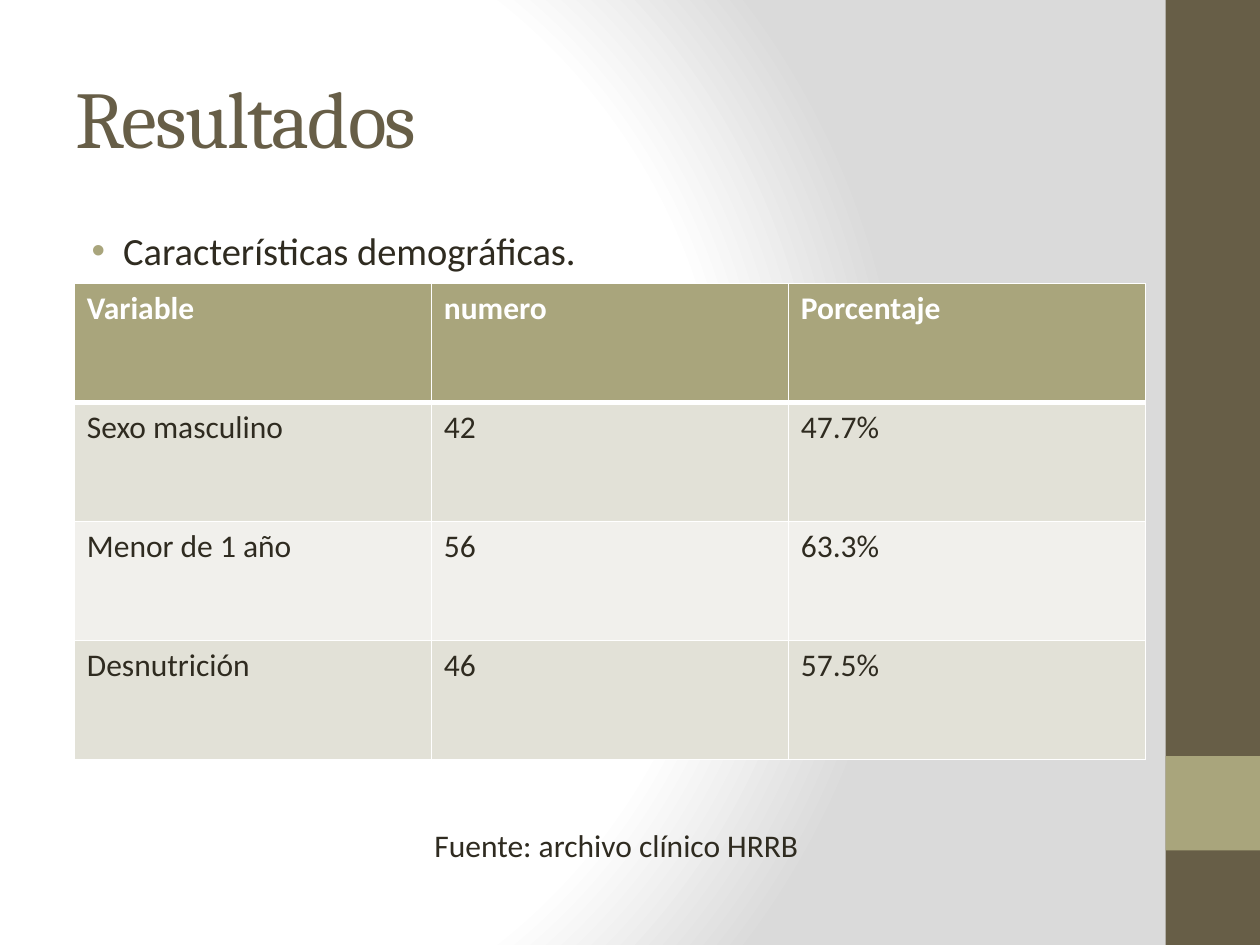
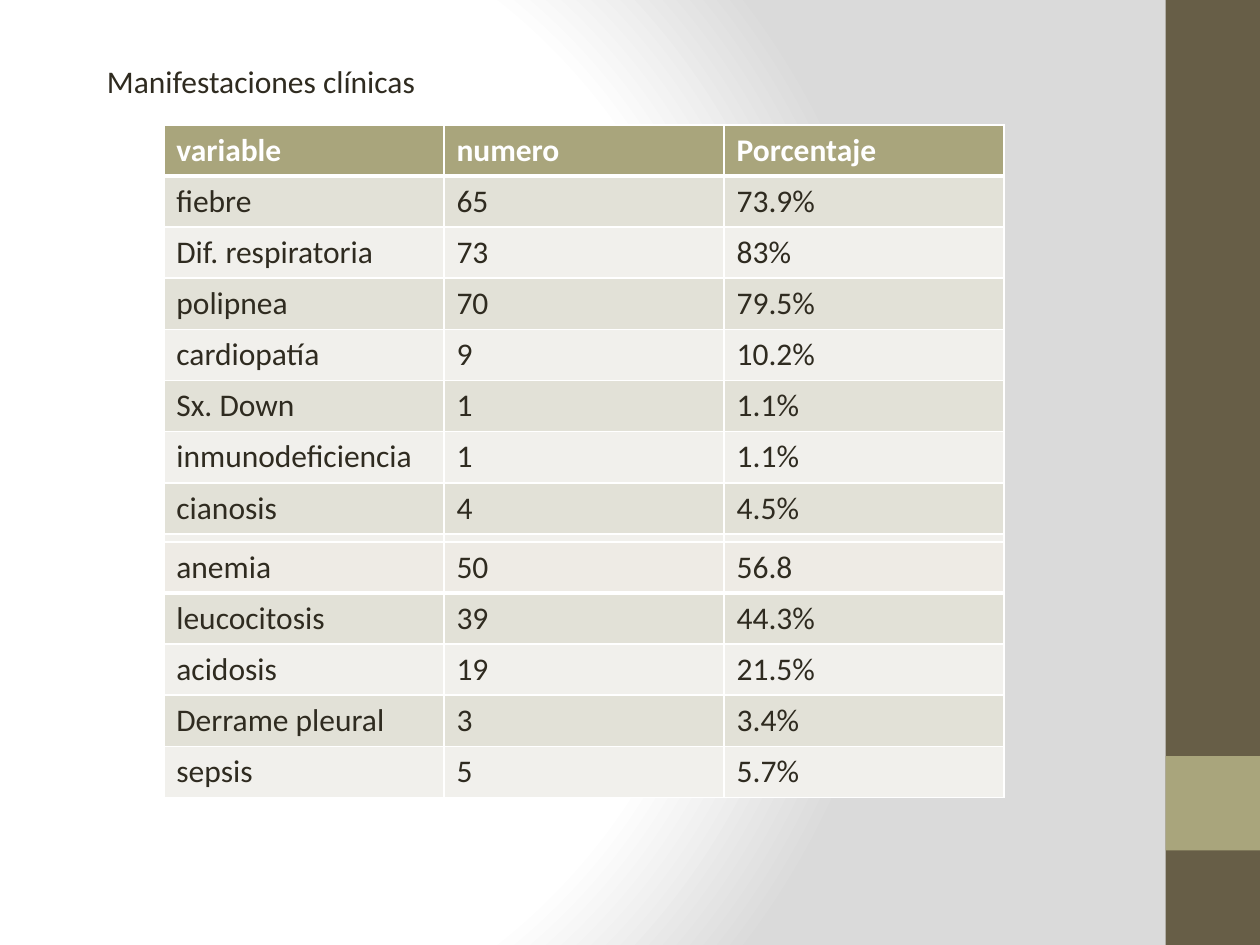
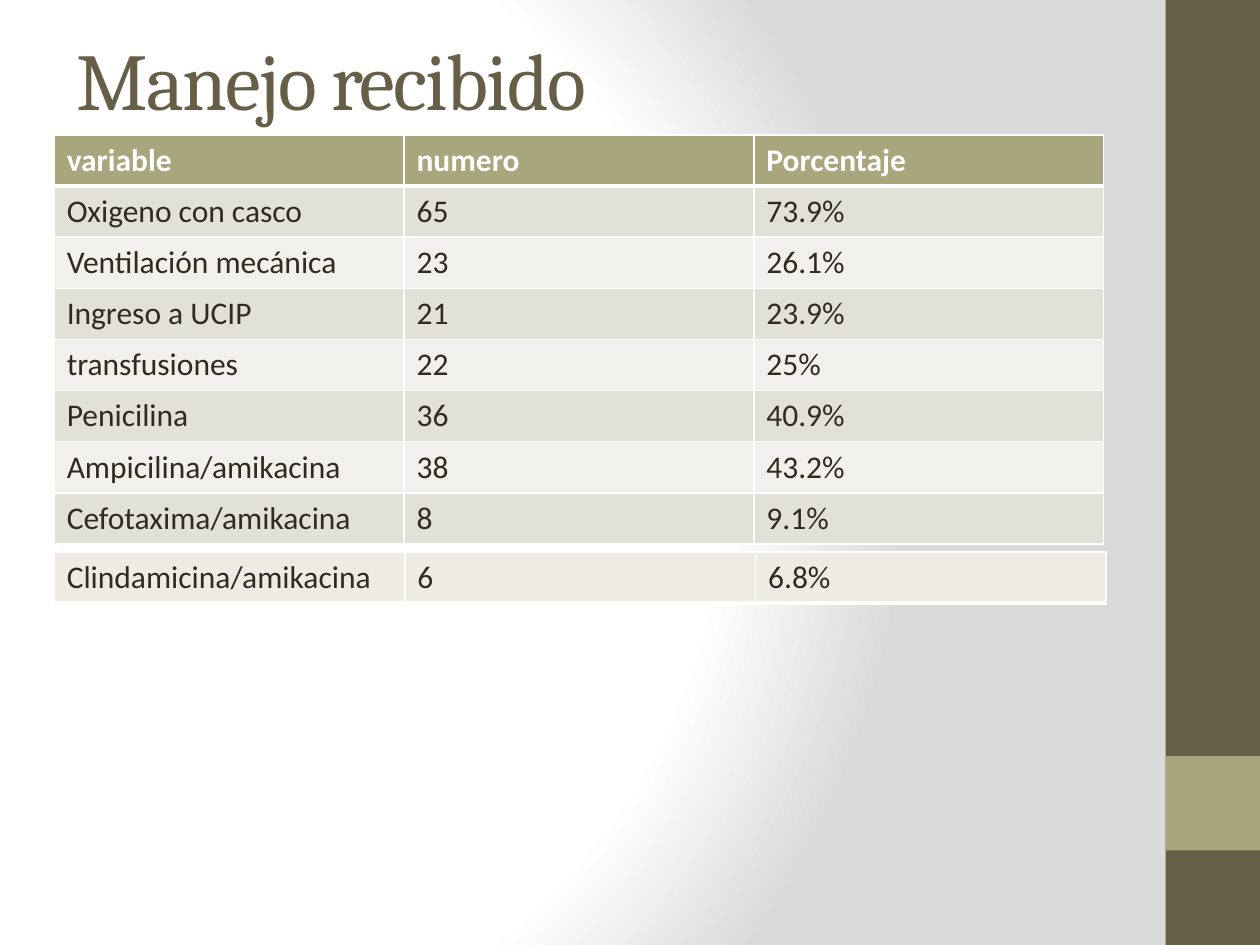
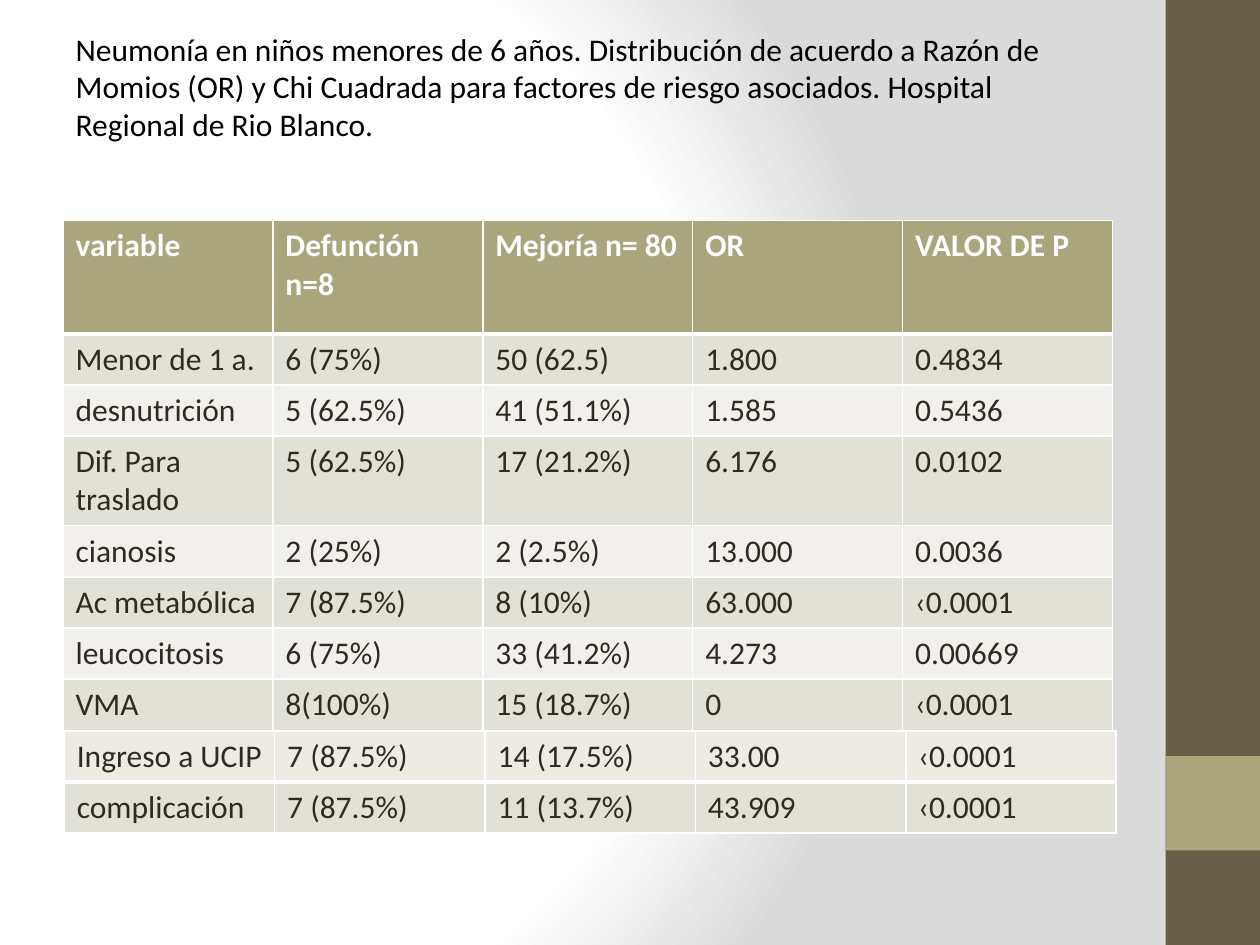
from pptx import Presentation
from pptx.dml.color import RGBColor
from pptx.enum.shapes import MSO_SHAPE
from pptx.enum.text import MSO_ANCHOR, MSO_AUTO_SIZE, PP_ALIGN
from pptx.oxml import parse_xml
from pptx.oxml.ns import qn
from pptx.util import Inches, Pt
from lxml.etree import SubElement

COLORS = {
    "brown": "675E47", "olive": "A9A57C", "ink": "2F2B20", "black": "000000",
    "white": "FFFFFF", "gray": "DADADA", "band_dark": "E2E1D7",
    "band_light": "F1F0EC", "sand": "EEEBE5",
}
BODY_FONT = "Calibri"
TITLE_FONT = "Cambria"
TITLE_ONLY, BLANK = 5, 6
ROW = 0.406
HEADER = ["variable", "numero", "Porcentaje"]

DEMOGRAPHICS = [
    ["Variable", "numero", "Porcentaje"],
    ["Sexo masculino", "42", "47.7%"],
    ["Menor de 1 año", "56", "63.3%"],
    ["Desnutrición", "46", "57.5%"],
]
SYMPTOMS = [
    HEADER,
    ["fiebre", "65", "73.9%"],
    ["Dif. respiratoria", "73", "83%"],
    ["polipnea", "70", "79.5%"],
    ["cardiopatía", "9", "10.2%"],
    ["Sx. Down", "1", "1.1%"],
    ["inmunodeficiencia", "1", "1.1%"],
    ["cianosis", "4", "4.5%"],
    ["", "", ""],
    ["", "", ""],
]
FINDINGS = [
    ["anemia", "50", "56.8"],
    ["leucocitosis", "39", "44.3%"],
    ["acidosis", "19", "21.5%"],
    ["Derrame pleural", "3", "3.4%"],
    ["sepsis", "5", "5.7%"],
]
TREATMENTS = [
    HEADER,
    ["Oxigeno con casco", "65", "73.9%"],
    ["Ventilación mecánica", "23", "26.1%"],
    ["Ingreso a UCIP", "21", "23.9%"],
    ["transfusiones", "22", "25%"],
    ["Penicilina", "36", "40.9%"],
    ["Ampicilina/amikacina", "38", "43.2%"],
    ["Cefotaxima/amikacina", "8", "9.1%"],
]
LAST_TREATMENT = [["Clindamicina/amikacina", "6", "6.8%"]]
RISKS = [
    ["variable", "Defunción n=8", "Mejoría n= 80", "OR", "VALOR DE P"],
    ["Menor de 1 a.", "6 (75%)", "50 (62.5)", "1.800", "0.4834"],
    ["desnutrición", "5 (62.5%)", "41 (51.1%)", "1.585", "0.5436"],
    ["Dif. Para traslado", "5 (62.5%)", "17 (21.2%)", "6.176", "0.0102"],
    ["cianosis", "2 (25%)", "2 (2.5%)", "13.000", "0.0036"],
    ["Ac metabólica", "7 (87.5%)", "8 (10%)", "63.000", "‹0.0001"],
    ["leucocitosis", "6 (75%)", "33 (41.2%)", "4.273", "0.00669"],
    ["VMA", "8(100%)", "15 (18.7%)", "0", "‹0.0001"],
]
OUTCOMES = [
    ["Ingreso a UCIP", "7 (87.5%)", "14 (17.5%)", "33.00", "‹0.0001"],
    ["complicación", "7 (87.5%)", "11 (13.7%)", "43.909", "‹0.0001"],
]


def rgb(name):
    return RGBColor.from_string(COLORS[name])


def add_run(p, text, size=18, color="ink", font=BODY_FONT, bold=False):
    r = p.add_run()
    r.text = text
    r.font.size = Pt(size)
    r.font.name = font
    r.font.bold = bold
    r.font.color.rgb = rgb(color)
    return r


def set_background(master):
    master.background.fill.gradient()
    grad = master.element.find(".//" + qn("a:gradFill"))
    stops = "".join(
        f'<a:gs pos="{pos * 1000}"><a:srgbClr val="{COLORS[name]}"/></a:gs>'
        for pos, name in [(0, "white"), (75, "white"), (100, "gray")])
    grad.getparent().replace(grad, parse_xml(
        '<a:gradFill xmlns:a="http://schemas.openxmlformats.org/drawingml/2006/main"'
        f' rotWithShape="1"><a:gsLst>{stops}</a:gsLst><a:path path="circle">'
        '<a:fillToRect l="20000" t="50000" r="100000" b="50000"/></a:path></a:gradFill>'))


def add_side_band(s):
    for top, height, color in [(0, 7.5, "brown"), (6, 0.75, "olive")]:
        sp = s.shapes.add_shape(MSO_SHAPE.RECTANGLE, Inches(9.25), Inches(top),
                                Inches(0.75), Inches(height))
        sp.shadow.inherit = False
        sp.fill.solid()
        sp.fill.fore_color.rgb = rgb(color)
        sp.line.fill.background()


def add_slide(prs, layout):
    s = prs.slides.add_slide(prs.slide_layouts[layout])
    add_side_band(s)
    return s


def set_title(s, box, text, size=46, color="brown", font=TITLE_FONT, spacing=-1):
    sp = s.shapes.title
    sp.left, sp.top, sp.width, sp.height = map(Inches, box)
    tf = sp.text_frame
    tf.word_wrap = True
    tf.auto_size = MSO_AUTO_SIZE.NONE
    tf.vertical_anchor = MSO_ANCHOR.MIDDLE
    p = tf.paragraphs[0]
    p.alignment = PP_ALIGN.LEFT
    r = add_run(p, text, size, color, font)
    r.font._element.set("spc", str(spacing * 100))


def add_text(s, box, text, size=18):
    tf = s.shapes.add_textbox(*map(Inches, box)).text_frame
    tf.word_wrap = True
    p = tf.paragraphs[0]
    add_run(p, text, size)
    return p


def add_bullet(p):
    pPr = p._p.get_or_add_pPr()
    pPr.set("marL", str(Inches(0.38)))
    pPr.set("indent", str(Inches(-0.25)))
    color = SubElement(pPr, qn("a:buClr"))
    SubElement(color, qn("a:srgbClr")).set("val", COLORS["olive"])
    SubElement(pPr, qn("a:buFont")).set("typeface", "Arial")
    SubElement(pPr, qn("a:buChar")).set("char", "•")


def set_borders(cell, row):
    tcPr = cell._tc.get_or_add_tcPr()
    widths = {"lnL": 1, "lnR": 1, "lnT": 3 if row == 1 else 1, "lnB": 3 if row == 0 else 1}
    for side, width in widths.items():
        ln = SubElement(tcPr, qn("a:" + side))
        ln.set("w", str(Pt(width)))
        fill = SubElement(ln, qn("a:solidFill"))
        SubElement(fill, qn("a:srgbClr")).set("val", COLORS["white"])


def add_data_table(s, left, top, width, rows, heights=None, header=True):
    heights = heights or [ROW] * len(rows)
    n_cols = len(rows[0])
    table = s.shapes.add_table(len(rows), n_cols, Inches(left), Inches(top),
                               Inches(width), Inches(sum(heights))).table
    table.first_row = header
    for col in table.columns:
        col.width = Inches(width / n_cols)
    for i, values in enumerate(rows):
        table.rows[i].height = Inches(heights[i])
        if i == 0:
            fill = "olive" if header else "sand"
        else:
            fill = "band_dark" if i % 2 else "band_light"
        is_head = header and i == 0
        for j, value in enumerate(values):
            cell = table.cell(i, j)
            set_borders(cell, i)
            cell.fill.solid()
            cell.fill.fore_color.rgb = rgb(fill)
            if value:
                add_run(cell.text_frame.paragraphs[0], value,
                        color="white" if is_head else "ink", bold=is_head)


def build_demographics(prs):
    s = add_slide(prs, TITLE_ONLY)
    set_title(s, (0.5, 0.3, 8.33, 1.25), "Resultados")
    add_bullet(add_text(s, (0.5, 1.75, 8.33, 0.5), "Características demográficas.", 22))
    add_data_table(s, 0.59, 2.25, 8.5, DEMOGRAPHICS, [0.945] * 4)
    add_text(s, (3.35, 6.51, 5.67, 0.4), "Fuente: archivo clínico HRRB")


def build_symptoms(prs):
    s = add_slide(prs, BLANK)
    add_data_table(s, 1.3, 0.99, 6.67, SYMPTOMS)
    add_text(s, (0.75, 0.44, 5.43, 0.4), "Manifestaciones clínicas")
    add_data_table(s, 1.3, 4.3, 6.67, FINDINGS, header=False)


def build_treatments(prs):
    s = add_slide(prs, TITLE_ONLY)
    set_title(s, (0.51, 0, 8.33, 1.25), "Manejo recibido")
    add_data_table(s, 0.43, 1.07, 8.33, TREATMENTS)
    add_data_table(s, 0.43, 4.38, 8.35, LAST_TREATMENT, header=False)


def build_risks(prs):
    s = add_slide(prs, TITLE_ONLY)
    set_title(s, (0.5, 0.3, 8.33, 0.77),
              "Neumonía en niños menores de 6 años. Distribución de acuerdo a Razón de "
              "Momios (OR) y Chi Cuadrada para factores de riesgo asociados. Hospital "
              "Regional de Rio Blanco.", 18, "black", BODY_FONT, 0)
    add_data_table(s, 0.5, 1.75, 8.33, RISKS, [0.9] + [ROW] * 7)
    add_data_table(s, 0.51, 5.8, 8.35, OUTCOMES, header=False)


def main():
    prs = Presentation()
    prs.slide_width, prs.slide_height = Inches(10), Inches(7.5)
    set_background(prs.slide_master)
    for build in (build_demographics, build_symptoms, build_treatments, build_risks):
        build(prs)
    prs.save("out.pptx")


if __name__ == "__main__":
    main()
